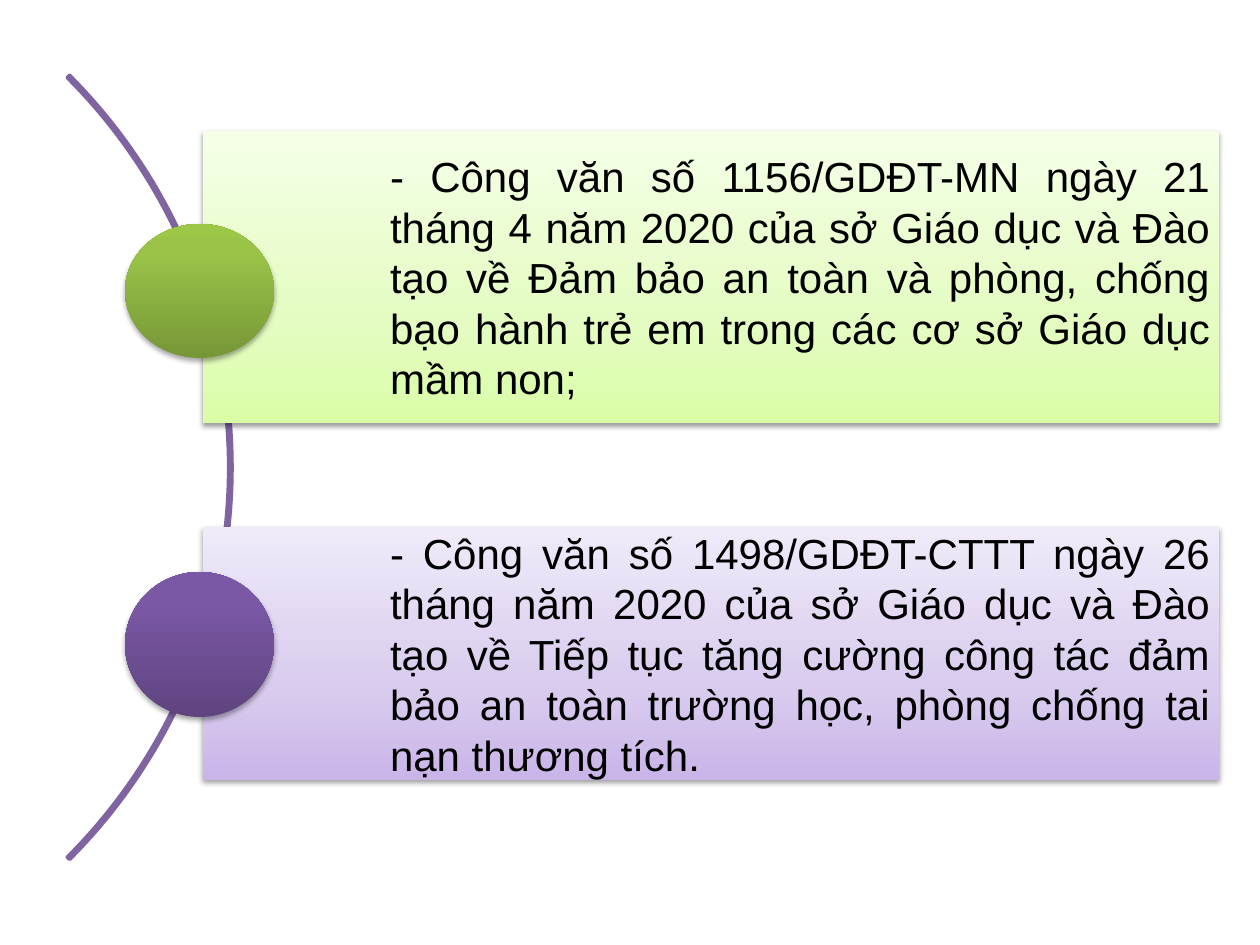
from pptx import Presentation, util as u
from pptx.dml.color import RGBColor
from pptx.enum import shapes, text
from pptx.oxml import parse_xml
from pptx.oxml.ns import nsdecls, qn

PX = 914400 // 126
FONT = "Arial"
ARC_COLOUR = "8064A2"
ARC_LEFT, ARC_TOP, ARC_SIZE = -877, -87, 1109
PANEL_LEFT, PANEL_WIDTH = 203, 1016
DOT_LEFT, DOT_WIDTH = 125, 149

# Content: vertical places are (top, height) in px; gradients run from bottom to top
ITEMS = [
    {
        "text": "- Công văn số 1156/GDĐT-MN ngày 21 tháng 4 năm 2020 của sở Giáo dục "
                "và Đào tạo về Đảm bảo an toàn và phòng, chống bạo hành trẻ em trong "
                "các cơ sở Giáo dục mầm non;",
        "panel": (131, 292), "dot": (224, 134),
        "panel_colours": ("DAFDA7", "E4FCC2", "F5FFE7"),
        "dot_colours": ("779737", "9BC348", "9DC746"),
    },
    {
        "text": "- Công văn số 1498/GDĐT-CTTT ngày 26 tháng năm 2020 của sở Giáo dục "
                "và Đào tạo về Tiếp tục tăng cường công tác đảm bảo an toàn trường học, "
                "phòng chống tai nạn thương tích.",
        "panel": (527, 253), "dot": (572, 145),
        "panel_colours": ("C9B5E8", "D8CBEE", "F0EAF9"),
        "dot_colours": ("5F4480", "7B58A6", "7C57A8"),
    },
]


def px(value):
    return u.Emu(value * PX)


def colour(value):
    return RGBColor.from_string(value)


def add_shape(slide, kind, left, top, width, height):
    shape = slide.shapes.add_shape(kind, px(left), px(top), px(width), px(height))
    shape.shadow.inherit = False
    return shape


def set_gradient(shape, colours, middle):
    """Fill upwards with three colours, the second at `middle` percent."""
    shape.fill.gradient()
    shape.fill.gradient_angle = 90
    stops = "".join(
        f'<a:gs pos="{position * 1000}"><a:srgbClr val="{value}"/></a:gs>'
        for position, value in zip((0, middle, 100), colours))
    stop_list = shape._element.spPr.find(qn("a:gradFill")).find(qn("a:gsLst"))
    stop_list.getparent().replace(
        stop_list, parse_xml(f'<a:gsLst {nsdecls("a")}>{stops}</a:gsLst>'))


def set_shadow(shape, opacity, distance):
    effects = shape._element.spPr.find(qn("a:effectLst"))
    effects.append(parse_xml(
        f'<a:outerShdw {nsdecls("a")} blurRad="{u.Pt(3.1)}" dist="{u.Pt(distance)}" '
        'dir="5400000" rotWithShape="0"><a:srgbClr val="000000">'
        f'<a:alpha val="{opacity * 1000}"/></a:srgbClr></a:outerShdw>'))


def add_panel(slide, item):
    panel = add_shape(slide, shapes.MSO_SHAPE.RECTANGLE,
                      PANEL_LEFT, item["panel"][0], PANEL_WIDTH, item["panel"][1])
    panel.line.fill.background()
    set_gradient(panel, item["panel_colours"], 35)
    set_shadow(panel, 38, 1.6)

    frame = panel.text_frame
    frame.word_wrap = True
    frame.vertical_anchor = text.MSO_ANCHOR.MIDDLE
    frame.margin_left = px(187)
    frame.margin_top = frame.margin_right = frame.margin_bottom = px(9)
    paragraph = frame.paragraphs[0]
    paragraph.text = item["text"]
    paragraph.alignment = text.PP_ALIGN.JUSTIFY
    paragraph.font.name = FONT
    paragraph.font.size = u.Pt(24)
    paragraph.font.color.rgb = colour("000000")


def add_dot(slide, item):
    dot = add_shape(slide, shapes.MSO_SHAPE.OVAL,
                    DOT_LEFT, item["dot"][0], DOT_WIDTH, item["dot"][1])
    dot.line.fill.background()
    set_gradient(dot, item["dot_colours"], 80)
    set_shadow(dot, 35, 1.8)


def main():
    presentation = Presentation()
    presentation.slide_width, presentation.slide_height = px(1260), px(945)
    slide = presentation.slides.add_slide(presentation.slide_layouts[6])

    # Curve behind the items: 315 to 45 degrees, almost no thickness
    arc = add_shape(slide, shapes.MSO_SHAPE.BLOCK_ARC,
                    ARC_LEFT, ARC_TOP, ARC_SIZE, ARC_SIZE)
    for index, value in enumerate((189, 27, 0.003)):
        arc.adjustments[index] = value
    arc.fill.background()
    arc.line.color.rgb = colour(ARC_COLOUR)
    arc.line.width = u.Pt(2)

    # Text panels, each with its dot
    for item in ITEMS:
        add_panel(slide, item)
        add_dot(slide, item)

    presentation.save("out.pptx")


if __name__ == "__main__":
    main()
